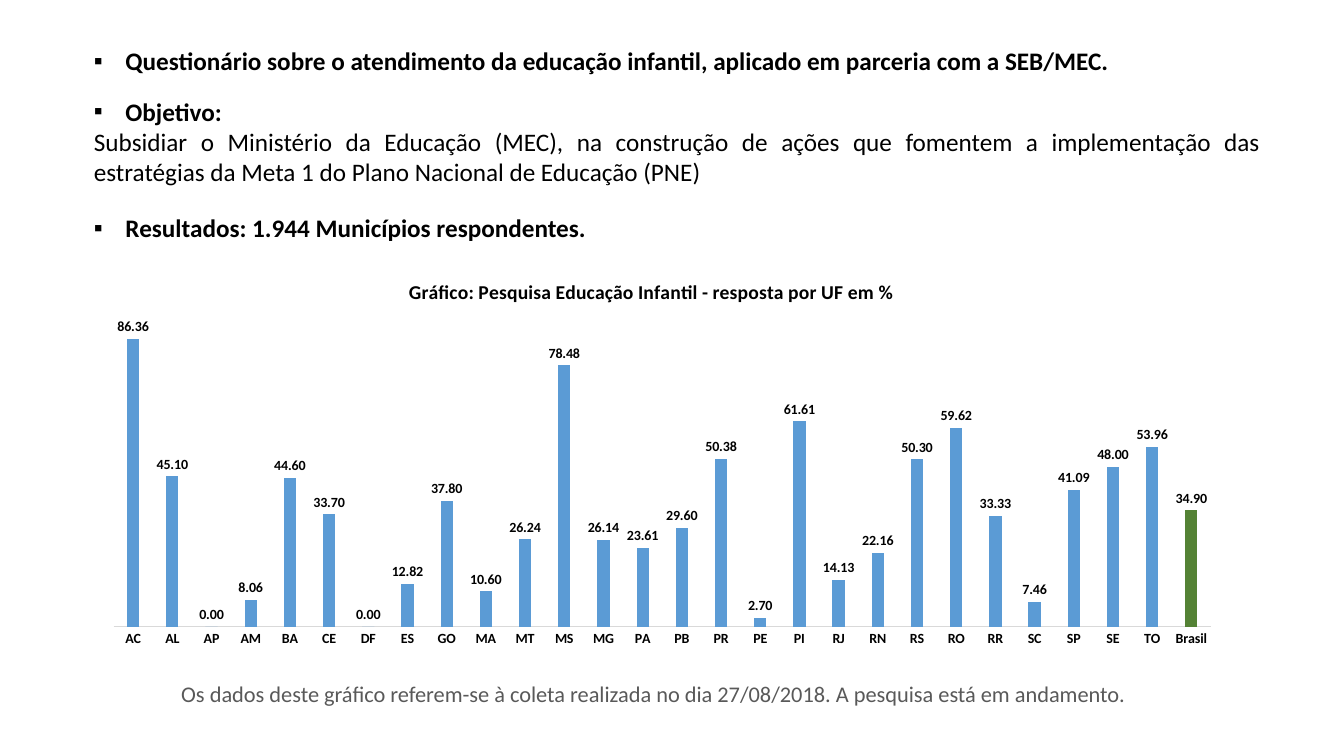
from lxml import etree
from pptx import Presentation
from pptx.chart.data import CategoryChartData
from pptx.dml.color import RGBColor
from pptx.enum import chart as ch, text as tx
from pptx.oxml import parse_xml
from pptx.oxml.ns import nsdecls, qn
from pptx.util import Pt

FONT = "Calibri"
UFS = ("AC AL AP AM BA CE DF ES GO MA MT MS MG PA PB PR PE PI RJ RN "
       "RS RO RR SC SP SE TO Brasil").split()
RATES = [86.36, 45.1, 0, 8.06, 44.6, 33.7, 0, 12.82, 37.8, 10.6, 26.24,
         78.48, 26.14, 23.61, 29.6, 50.38, 2.7, 61.61, 14.13, 22.16,
         50.3, 59.62, 33.33, 7.46, 41.09, 48, 53.96, 34.9]


def color(code):
    return RGBColor.from_string(code)


def style(font, size, code="000000", bold=False):
    font.name, font.size, font.bold = FONT, Pt(size), bold
    font.color.rgb = color(code)


def bullet(para):
    props = para._p.get_or_add_pPr()
    props.set("marL", str(Pt(22.5)))
    props.set("indent", str(-Pt(22.5)))
    face = etree.SubElement(props, qn("a:buFont"))
    face.set("typeface", "Arial")
    mark = etree.SubElement(props, qn("a:buChar"))
    mark.set("char", "▪")


def text_box(slide, box, lines, size, code="000000", align=None, wrap=True):
    """Each line is (words, heading); headings are bold and bulleted."""
    frame = slide.shapes.add_textbox(*map(Pt, box)).text_frame
    frame.word_wrap = wrap
    frame.auto_size = tx.MSO_AUTO_SIZE.SHAPE_TO_FIT_TEXT
    for i, (words, head) in enumerate(lines):
        para = frame.add_paragraph() if i else frame.paragraphs[0]
        para.alignment = align
        if head:
            bullet(para)
        run = para.add_run()
        run.text = words
        style(run.font, size, code, head)


def intro(slide, left, top):
    both = tx.PP_ALIGN.JUSTIFY
    text_box(slide, (left, top, 835, 29), [
        ("Questionário sobre o atendimento da educação infantil, "
         "aplicado em parceria com a SEB/MEC.", True)], 18, align=both)
    text_box(slide, (left, top + 36, 847.5, 72.7), [
        ("Objetivo:", True),
        ("Subsidiar o Ministério da Educação (MEC), na construção de ações "
         "que fomentem a implementação das estratégias da Meta 1 do Plano "
         "Nacional de Educação (PNE)", False)], 18, align=both)
    text_box(slide, (left, top + 119, 368.6, 29), [
        ("Resultados: 1.944 Municípios respondentes.", True)], 18, wrap=False)


def set_plot(chart, x, y, w, h):
    area = chart._chartSpace.chart.plotArea
    for old in area.findall(qn("c:layout")):
        area.remove(old)
    area.insert(0, parse_xml(
        f'<c:layout {nsdecls("c")}><c:manualLayout>'
        '<c:layoutTarget val="inner"/><c:xMode val="edge"/>'
        f'<c:yMode val="edge"/><c:x val="{x}"/><c:y val="{y}"/>'
        f'<c:w val="{w}"/><c:h val="{h}"/></c:manualLayout></c:layout>'))


def survey(slide, box):
    data = CategoryChartData(number_format="0.00")
    data.categories = UFS
    data.add_series("Resposta", RATES)
    kind = ch.XL_CHART_TYPE.COLUMN_CLUSTERED
    chart = slide.shapes.add_chart(kind, *map(Pt, box), data).chart
    style(chart.font, 10)
    chart.has_legend = False

    # Title
    chart.has_title = True
    chart.chart_title.include_in_layout = False
    run = chart.chart_title.text_frame.paragraphs[0].add_run()
    run.text = "Gráfico: Pesquisa Educação Infantil - resposta por UF em %"
    style(run.font, 14, bold=True)

    # Axes
    cat, val = chart.category_axis, chart.value_axis
    cat.major_tick_mark = cat.minor_tick_mark = ch.XL_TICK_MARK.NONE
    cat.format.line.color.rgb = color("D9D9D9")
    cat.format.line.width = Pt(0.75)
    style(cat.tick_labels.font, 10, bold=True)
    val.minimum_scale, val.maximum_scale = 0, 100
    val.has_major_gridlines = val.visible = False

    # Columns, with the national rate in green
    plot = chart.plots[0]
    plot.gap_width, plot.overlap = 219, -27
    plot.vary_by_categories = False
    bars = plot.series[0]
    bars.invert_if_negative = False
    last = bars.points[len(UFS) - 1]
    for part, code in ((bars, "5B9BD5"), (last, "548235")):
        part.format.fill.solid()
        part.format.fill.fore_color.rgb = color(code)

    # Values above the columns
    tags = bars.data_labels
    tags.show_value = True
    tags.number_format, tags.number_format_is_linked = "0.00", False
    tags.position = ch.XL_LABEL_POSITION.OUTSIDE_END
    style(tags.font, 10, bold=True)
    set_plot(chart, 0.026, 0.081, 0.967, 0.833)


def note(slide, box):
    text_box(slide, box, [
        ("Os dados deste gráfico referem-se à coleta realizada no dia "
         "27/08/2018. A pesquisa está em andamento.", False)], 16, "595959")


def main():
    deck = Presentation()
    deck.slide_width, deck.slide_height = Pt(960), Pt(540)
    slide = deck.slides.add_slide(deck.slide_layouts[6])
    intro(slide, 60, 29)
    survey(slide, (60, 186.5, 810.7, 285.8))
    note(slide, (122.4, 482.4, 698.4, 26.6))
    deck.save("out.pptx")


if __name__ == "__main__":
    main()
